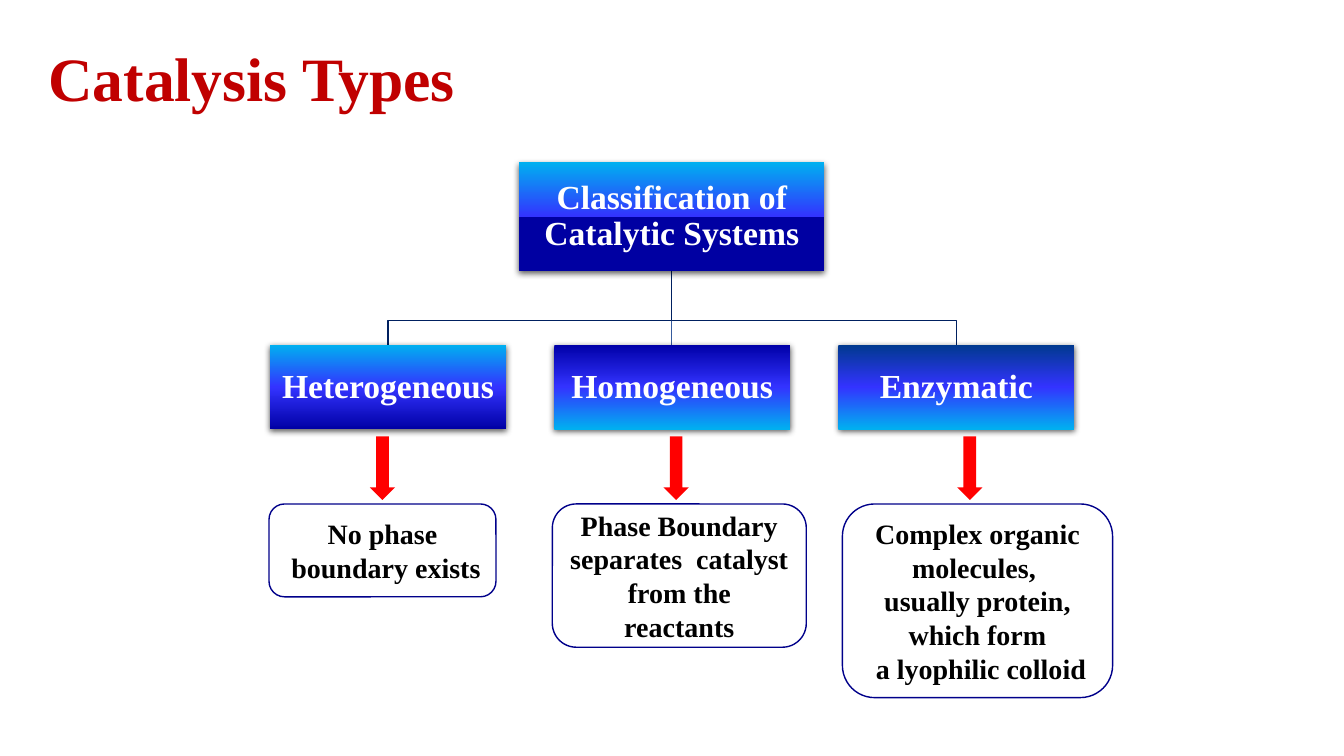
from dataclasses import dataclass

from lxml import etree
from pptx import Presentation
from pptx.dml.color import RGBColor
from pptx.enum.shapes import MSO_CONNECTOR, MSO_SHAPE
from pptx.enum.text import MSO_ANCHOR, PP_ALIGN
from pptx.oxml import parse_xml
from pptx.oxml.ns import nsdecls, qn
from pptx.util import Cm, Pt

RECTANGLE = MSO_SHAPE.RECTANGLE
ROUNDED = MSO_SHAPE.ROUNDED_RECTANGLE
DOWN_ARROW = MSO_SHAPE.DOWN_ARROW
STRAIGHT = MSO_CONNECTOR.STRAIGHT
LEFT, CENTER = PP_ALIGN.LEFT, PP_ALIGN.CENTER
TOP, MIDDLE = MSO_ANCHOR.TOP, MSO_ANCHOR.MIDDLE


@dataclass(frozen=True)
class Theme:
    font: str = "Times New Roman"
    title_size: int = 44
    box_size: int = 24
    note_size: int = 20
    title: str = "C00000"
    white: str = "FFFFFF"
    black: str = "000000"
    red: str = "FF0000"
    sky: str = "00B0F0"
    blue: str = "3333FF"
    tree_line: str = "002060"
    middle_line: str = "365B9D"
    note_line: str = "00008A"


THEME = Theme()

# Tree geometry in centimetres
ROOT_LEFT, ROOT_TOP, ROOT_WIDTH, ROOT_HEIGHT = 13.08, 4.09, 7.7, 2.74
ROOT_CENTER, ROOT_BOTTOM = ROOT_LEFT + ROOT_WIDTH / 2, ROOT_TOP + ROOT_HEIGHT
BRANCH_LEFT, BRANCH_TOP, BRANCH_WIDTH, BRANCH_HEIGHT = 6.81, 8.69, 5.94, 2.13
BRANCH_PITCH = 7.16
BUS_TOP = 8.08
ARROW_LEFT, ARROW_TOP, ARROW_PITCH = 9.32, 11, 7.4
NOTE_TOP = 12.7

ROOT_STOPS = [(0, THEME.sky), (50, THEME.blue), (50, "0000A2")]

# Name, darkest gradient colour, gradient angle, note place (left, width, height), note lines
BRANCHES = [
    ("Heterogeneous", "0000A4", 270, (6.78, 5.72, 2.34),
     ["No phase", " boundary exists"]),
    ("Homogeneous", "0000A8", 90, (13.92, 6.4, 3.61),
     ["Phase Boundary separates  catalyst from the reactants"]),
    ("Enzymatic", "00398E", 90, (21.23, 6.81, 4.88),
     ["Complex organic molecules, ", "usually protein, which form", " a lyophilic colloid"]),
]


def rgb(color):
    return RGBColor.from_string(color)


def write_text(shape, lines, *, size, color, align=CENTER, anchor=MIDDLE,
               inset=None, line_spacing=None):
    frame = shape.text_frame
    frame.word_wrap = True
    frame.vertical_anchor = anchor
    if inset is not None:
        frame.margin_left = frame.margin_right = Cm(inset)
        frame.margin_top = frame.margin_bottom = Cm(inset)
    for index, line in enumerate(lines):
        para = frame.paragraphs[0] if index == 0 else frame.add_paragraph()
        para.alignment = align
        if line_spacing:
            para.line_spacing = line_spacing
        span = para.add_run()
        span.text = line
        span.font.name = THEME.font
        span.font.size = Pt(size)
        span.font.bold = True
        span.font.color.rgb = rgb(color)


def add_shape(page, kind, left, top, width, height, *, fill=None, line=None):
    shape = page.shapes.add_shape(kind, Cm(left), Cm(top), Cm(width), Cm(height))
    shape.shadow.inherit = False
    if fill:
        shape.fill.solid()
        shape.fill.fore_color.rgb = rgb(fill)
    else:
        shape.fill.background()
    if line:
        shape.line.color.rgb = rgb(line)
        shape.line.width = Pt(1)
    else:
        shape.line.fill.background()
    return shape


def set_gradient(shape, stops, angle):
    marks = "".join(f'<a:gs pos="{place * 1000}"><a:srgbClr val="{color}"/></a:gs>'
                    for place, color in stops)
    gradient = parse_xml(f'<a:gradFill {nsdecls("a")} rotWithShape="1"><a:gsLst>{marks}'
                         f'</a:gsLst><a:lin ang="{angle * 60000}" scaled="0"/></a:gradFill>')
    properties = shape.element.spPr
    properties.replace(properties.find(qn("a:noFill")), gradient)


def set_shadow(shape):
    effects = shape.element.spPr.find(qn("a:effectLst"))
    effects.append(parse_xml(
        f'<a:outerShdw {nsdecls("a")} blurRad="{Pt(4.5)}" dist="{Pt(1.5)}" dir="5400000" '
        f'rotWithShape="0"><a:srgbClr val="{THEME.black}"><a:alpha val="63000"/></a:srgbClr>'
        '</a:outerShdw>'))


def add_tree_box(page, text, left, top, width, height, stops, angle):
    box = add_shape(page, RECTANGLE, left, top, width, height)
    set_gradient(box, stops, angle)
    set_shadow(box)
    write_text(box, [text], size=THEME.box_size, color=THEME.white,
               inset=0.05, line_spacing=0.9)


def add_elbow(page, branch_center):
    points = [(ROOT_CENTER, BUS_TOP), (branch_center, BUS_TOP), (branch_center, BRANCH_TOP)]
    builder = page.shapes.build_freeform(Cm(ROOT_CENTER), Cm(ROOT_BOTTOM))
    builder.add_line_segments([(Cm(x), Cm(y)) for x, y in points], close=False)
    elbow = builder.convert_to_shape()
    elbow.shadow.inherit = False
    elbow.fill.background()
    elbow.line.color.rgb = rgb(THEME.tree_line)
    elbow.line.width = Pt(1)


def add_stem(page):
    stem = page.shapes.add_connector(STRAIGHT, Cm(ROOT_CENTER), Cm(ROOT_BOTTOM),
                                     Cm(ROOT_CENTER), Cm(BRANCH_TOP))
    stem.line.color.rgb = rgb(THEME.middle_line)
    stem.line.width = Pt(1)
    etree.SubElement(stem.element.spPr, qn("a:effectLst"))


def add_branch(page, index, name, dark, angle, note_place, note_lines):
    add_tree_box(page, name, BRANCH_LEFT + index * BRANCH_PITCH, BRANCH_TOP,
                 BRANCH_WIDTH, BRANCH_HEIGHT,
                 [(0, dark), (50, THEME.blue), (100, THEME.sky)], angle)
    left, width, height = note_place
    note = add_shape(page, ROUNDED, left, NOTE_TOP, width, height, line=THEME.note_line)
    write_text(note, note_lines, size=THEME.note_size, color=THEME.black)
    add_shape(page, DOWN_ARROW, ARROW_LEFT + index * ARROW_PITCH, ARROW_TOP,
              0.64, 1.6, fill=THEME.red)


def main():
    deck = Presentation()
    deck.slide_width, deck.slide_height = Cm(33.87), Cm(19.05)
    page = deck.slides.add_slide(deck.slide_layouts[6])

    # Title
    title = page.shapes.add_textbox(Cm(0.97), Cm(0.89), Cm(17.27), Cm(2.13))
    write_text(title, ["Catalysis Types"], size=THEME.title_size, color=THEME.title,
               align=LEFT, anchor=TOP)

    # Tree lines, behind the boxes
    first_center = BRANCH_LEFT + BRANCH_WIDTH / 2
    add_elbow(page, first_center + 2 * BRANCH_PITCH)
    add_stem(page)
    add_elbow(page, first_center)

    # Root box and branches with their notes
    add_tree_box(page, "Classification of Catalytic Systems", ROOT_LEFT, ROOT_TOP,
                 ROOT_WIDTH, ROOT_HEIGHT, ROOT_STOPS, 90)
    for index, branch in enumerate(BRANCHES):
        add_branch(page, index, *branch)

    deck.save("out.pptx")


if __name__ == "__main__":
    main()
